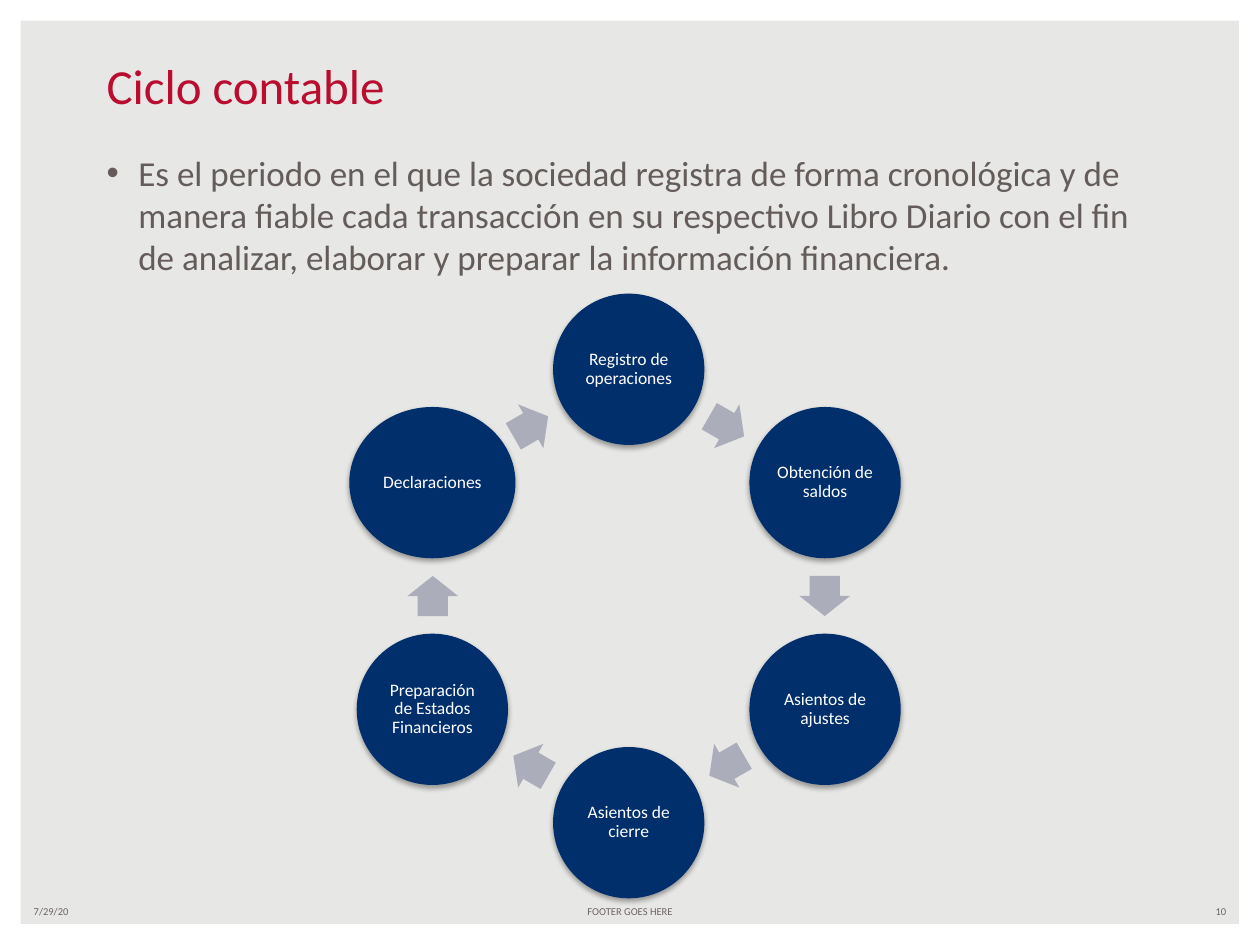
import math
from typing import NamedTuple

import lxml.etree
import pptx
import pptx.dml.color
import pptx.enum.shapes
import pptx.enum.text
import pptx.oxml.ns
import pptx.util

Cm = pptx.util.Cm
Pt = pptx.util.Pt
Shape = pptx.enum.shapes.MSO_SHAPE
Align = pptx.enum.text.PP_ALIGN
Anchor = pptx.enum.text.MSO_ANCHOR
qn = pptx.oxml.ns.qn

FONT = "Calibri"
BACKGROUND = "E7E7E5"
WHITE = "FFFFFF"
RED = "BA0C2F"
NAVY = "002F6C"
ARROW_GREY = "ABADBA"
BODY_GREY = "635C5B"
FOOTER_GREY = "6C6463"

STEPS = [
    "Registro de operaciones",
    "Obtención de saldos",
    "Asientos de ajustes",
    "Asientos de cierre",
    "Preparación de Estados Financieros",
    "Declaraciones",
]
WIDE_STEP = "Declaraciones"


class Box(NamedTuple):
    """A region in centimetres."""
    left: float
    top: float
    width: float
    height: float

    def lengths(self):
        return [Cm(value) for value in self]


def centred_box(x, y, width, height):
    return Box(x - width / 2, y - height / 2, width, height)


def color(hex_value):
    return pptx.dml.color.RGBColor.from_string(hex_value)


def set_text(shape, text, size, hex_value, align=Align.LEFT, anchor=Anchor.TOP):
    frame = shape.text_frame
    frame.word_wrap = True
    frame.vertical_anchor = anchor
    frame.text = text
    paragraph = frame.paragraphs[0]
    paragraph.alignment = align
    for run in paragraph.runs:
        run.font.name = FONT
        run.font.size = Pt(size)
        run.font.color.rgb = color(hex_value)
    return paragraph


def add_plain_shape(shapes, kind, box, fill):
    shape = shapes.add_shape(kind, *box.lengths())
    shape.shadow.inherit = False
    shape.fill.solid()
    shape.fill.fore_color.rgb = color(fill)
    shape.line.fill.background()
    return shape


def add_soft_shadow(shape):
    effects = shape._element.spPr.find(qn("a:effectLst"))
    shadow = lxml.etree.SubElement(
        effects, qn("a:outerShdw"), blurRad=str(Pt(3.1)), dist=str(Pt(1.8)),
        dir="5400000", rotWithShape="0")
    black = lxml.etree.SubElement(shadow, qn("a:srgbClr"), val="000000")
    lxml.etree.SubElement(black, qn("a:alpha"), val="35000")


def add_frame(slide, box):
    slide.background.fill.solid()
    slide.background.fill.fore_color.rgb = color(BACKGROUND)
    frame = add_plain_shape(slide.shapes, Shape.FRAME, box, WHITE)
    frame.adjustments[0] = 0.022


def add_title(slide, box):
    title = slide.shapes.add_textbox(*box.lengths())
    set_text(title, "Ciclo contable", 28, RED, anchor=Anchor.BOTTOM)


def add_definition(slide, box):
    definition = slide.shapes.add_textbox(*box.lengths())
    paragraph = set_text(
        definition,
        "Es el periodo en el que la sociedad registra de forma cronológica y de "
        "manera fiable cada transacción en su respectivo Libro Diario con el fin "
        "de analizar, elaborar y preparar la información financiera.",
        20, BODY_GREY)
    paragraph.space_after = Pt(12)
    properties = paragraph._p.get_or_add_pPr()
    properties.set("marL", str(Cm(0.64)))
    properties.set("indent", str(-Cm(0.64)))
    lxml.etree.SubElement(properties, qn("a:buFont"), typeface="Arial")
    lxml.etree.SubElement(properties, qn("a:buChar"), char="•")


def add_footer(slide, box):
    side, middle = 5.92, 8.05
    parts = [
        ("7/29/20", box.left, side, Align.LEFT),
        ("FOOTER GOES HERE", box.left + (box.width - middle) / 2, middle, Align.CENTER),
        ("10", box.left + box.width - side, side, Align.RIGHT),
    ]
    for text, left, width, align in parts:
        part = slide.shapes.add_textbox(*Box(left, box.top, width, box.height).lengths())
        set_text(part, text, 6, FOOTER_GREY, align, Anchor.MIDDLE)


def add_step(shapes, box, text):
    circle = add_plain_shape(shapes, Shape.OVAL, box, NAVY)
    add_soft_shadow(circle)
    frame = circle.text_frame
    frame.margin_left = frame.margin_right = Cm(0.03)
    frame.margin_top = frame.margin_bottom = Cm(0.03)
    paragraph = set_text(circle, text, 10, WHITE, Align.CENTER, Anchor.MIDDLE)
    paragraph.line_spacing = 0.9


def add_arrow(shapes, box, rotation):
    arrow = add_plain_shape(shapes, Shape.RIGHT_ARROW, box, ARROW_GREY)
    arrow.adjustments[0] = 0.6
    arrow.adjustments[1] = 0.5
    arrow.rotation = rotation


def add_cycle(slide, box):
    """Steps clockwise from the top of a ring, with an arrow after each."""
    shapes = slide.shapes.add_group_shape().shapes
    diameter, wide_diameter = 3.05, 3.35
    step_radius = (box.height - diameter) / 2
    arrow_radius = 3.95
    turn = 360 / len(STEPS)

    def on_ring(radius, degrees):
        angle = math.radians(degrees)
        return (box.left + box.width / 2 + radius * math.sin(angle),
                box.top + box.height / 2 - radius * math.cos(angle))

    for index, text in enumerate(STEPS):
        width = wide_diameter if text == WIDE_STEP else diameter
        add_step(shapes, centred_box(*on_ring(step_radius, index * turn), width, diameter), text)
        arrow_angle = (index + 0.5) * turn
        add_arrow(shapes, centred_box(*on_ring(arrow_radius, arrow_angle), 0.81, 1.02), arrow_angle)


def main():
    presentation = pptx.Presentation()
    presentation.slide_width = Cm(25.4)
    presentation.slide_height = Cm(19.05)
    slide = presentation.slides.add_slide(presentation.slide_layouts[6])
    add_frame(slide, Box(0, 0, 25.4, 19.05))
    add_definition(slide, Box(1.9, 2.92, 21.6, 3.38))
    add_footer(slide, Box(0.43, 18.11, 24.54, 0.51))
    add_title(slide, Box(1.9, 0.99, 21.6, 1.45))
    add_cycle(slide, Box(7.19, 5.92, 10.97, 12.19))
    presentation.save("out.pptx")


if __name__ == "__main__":
    main()
